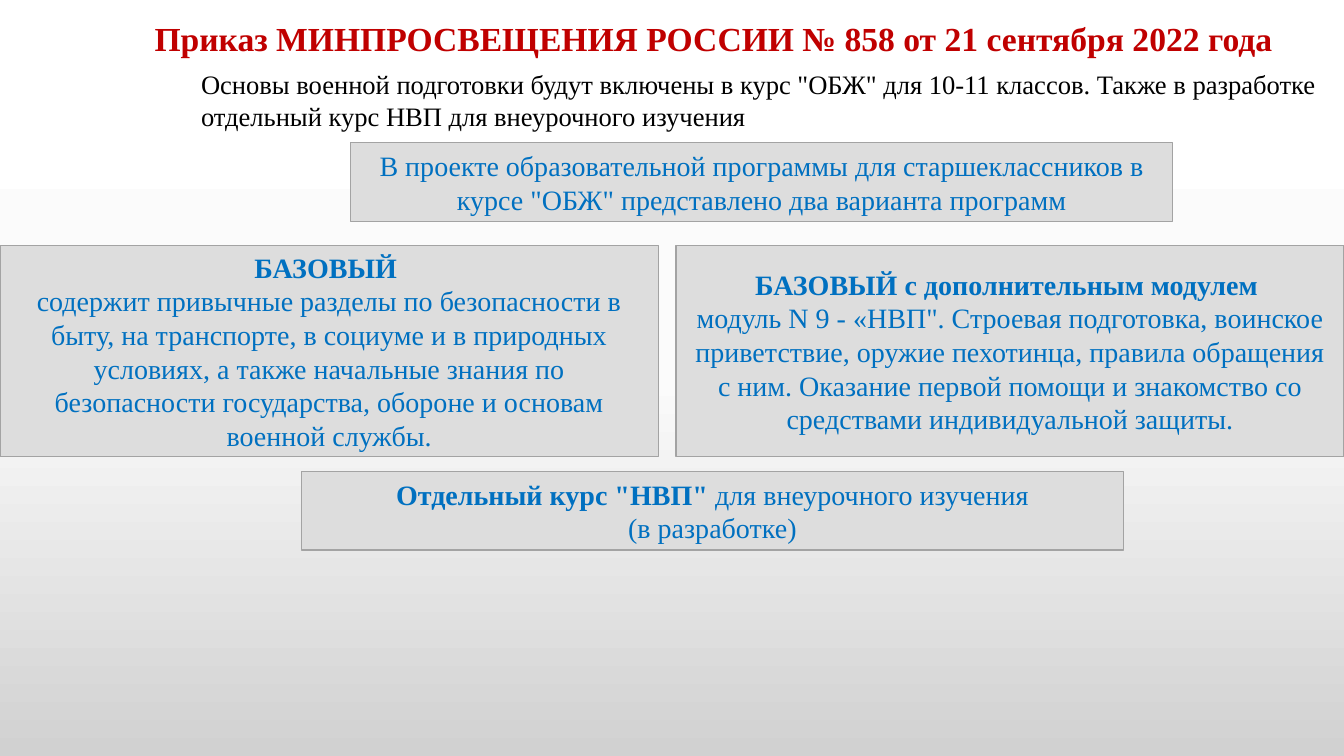
from copy import deepcopy
from pptx import Presentation
from pptx.dml.color import RGBColor
from pptx.enum.shapes import MSO_SHAPE
from pptx.enum.text import MSO_ANCHOR, MSO_AUTO_SIZE, PP_ALIGN
from pptx.oxml.ns import qn
from pptx.util import Pt

PX = 9525
FONT = "Times New Roman"
RED = RGBColor(0xC0, 0x00, 0x00)
BLACK = RGBColor(0x00, 0x00, 0x00)
BLUE = RGBColor(0x00, 0x70, 0xC0)
PANEL = RGBColor(0xDD, 0xDD, 0xDD)
BORDER = RGBColor(0xA3, 0xA3, 0xA3)
WHITE = RGBColor(0xFF, 0xFF, 0xFF)
NEAR_WHITE = RGBColor(0xFB, 0xFB, 0xFB)
GREY = RGBColor(0xD1, 0xD1, 0xD1)


def px(*lengths):
    return [n * PX for n in lengths]


def write(tf, paragraphs, size, color, align):
    tf.word_wrap = True
    for i, runs in enumerate(paragraphs):
        p = tf.paragraphs[0] if i == 0 else tf.add_paragraph()
        p.alignment = align
        for text, bold in runs:
            r = p.add_run()
            r.text = text
            r.font.name = FONT
            r.font.size = Pt(size)
            r.font.bold = bold
            r.font.color.rgb = color


prs = Presentation()
prs.slide_width, prs.slide_height = px(1280, 720)
s = prs.slides.add_slide(prs.slide_layouts[6])

fill = s.background.fill
fill.gradient()
fill.gradient_angle = 270
stops = s.element.find(".//" + qn("a:gsLst"))
stops.append(deepcopy(stops[-1]))
gradient = [(0, WHITE), (0.5, NEAR_WHITE), (1, GREY)]
for stop, (position, color) in zip(fill.gradient_stops, gradient):
    stop.position = position
    stop.color.rgb = color

headings = [
    ((106, 12, 1147, 48), 24, RED, True, PP_ALIGN.CENTER,
     "Приказ МИНПРОСВЕЩЕНИЯ РОССИИ № 858 от 21 сентября 2022 года"),
    ((182, 60, 1088, 71), 19, BLACK, False, PP_ALIGN.LEFT,
     "Основы военной подготовки будут включены в курс \"ОБЖ\" для 10-11 классов. "
     "Также в разработке отдельный курс НВП для внеурочного изучения"),
]
for box, size, color, bold, align, text in headings:
    tf = s.shapes.add_textbox(*px(*box)).text_frame
    write(tf, [[(text, bold)]], size, color, align)
    tf.auto_size = MSO_AUTO_SIZE.SHAPE_TO_FIT_TEXT

panels = [
    ((334, 136, 783, 75), [
        [("В проекте образовательной программы для старшеклассников в курсе \"ОБЖ\" "
          "представлено два варианта программ", False)],
    ]),
    ((644, 234, 636, 201), [
        [("БАЗОВЫЙ с дополнительным модулем ", True)],
        [("модуль N 9 - «НВП\". Строевая подготовка, воинское приветствие, оружие "
          "пехотинца, правила обращения с ним. Оказание первой помощи и знакомство "
          "со средствами индивидуальной защиты.", False)],
    ]),
    ((0, 234, 627, 201), [
        [("БАЗОВЫЙ ", True)],
        [("содержит привычные разделы по безопасности в быту, на транспорте, в социуме "
          "и в природных условиях, а также начальные знания по безопасности "
          "государства, обороне и основам военной службы.", False)],
    ]),
    ((287, 449, 783, 75), [
        [("Отдельный курс \"НВП\" ", True), ("для внеурочного изучения", False)],
        [("(в разработке)", False)],
    ]),
]
for box, paragraphs in panels:
    sp = s.shapes.add_shape(MSO_SHAPE.RECTANGLE, *px(*box))
    sp.shadow.inherit = False
    sp.fill.solid()
    sp.fill.fore_color.rgb = PANEL
    sp.line.color.rgb = BORDER
    sp.line.width = Pt(1)
    sp.text_frame.vertical_anchor = MSO_ANCHOR.MIDDLE
    write(sp.text_frame, paragraphs, 20, BLUE, PP_ALIGN.CENTER)

prs.save("out.pptx")
